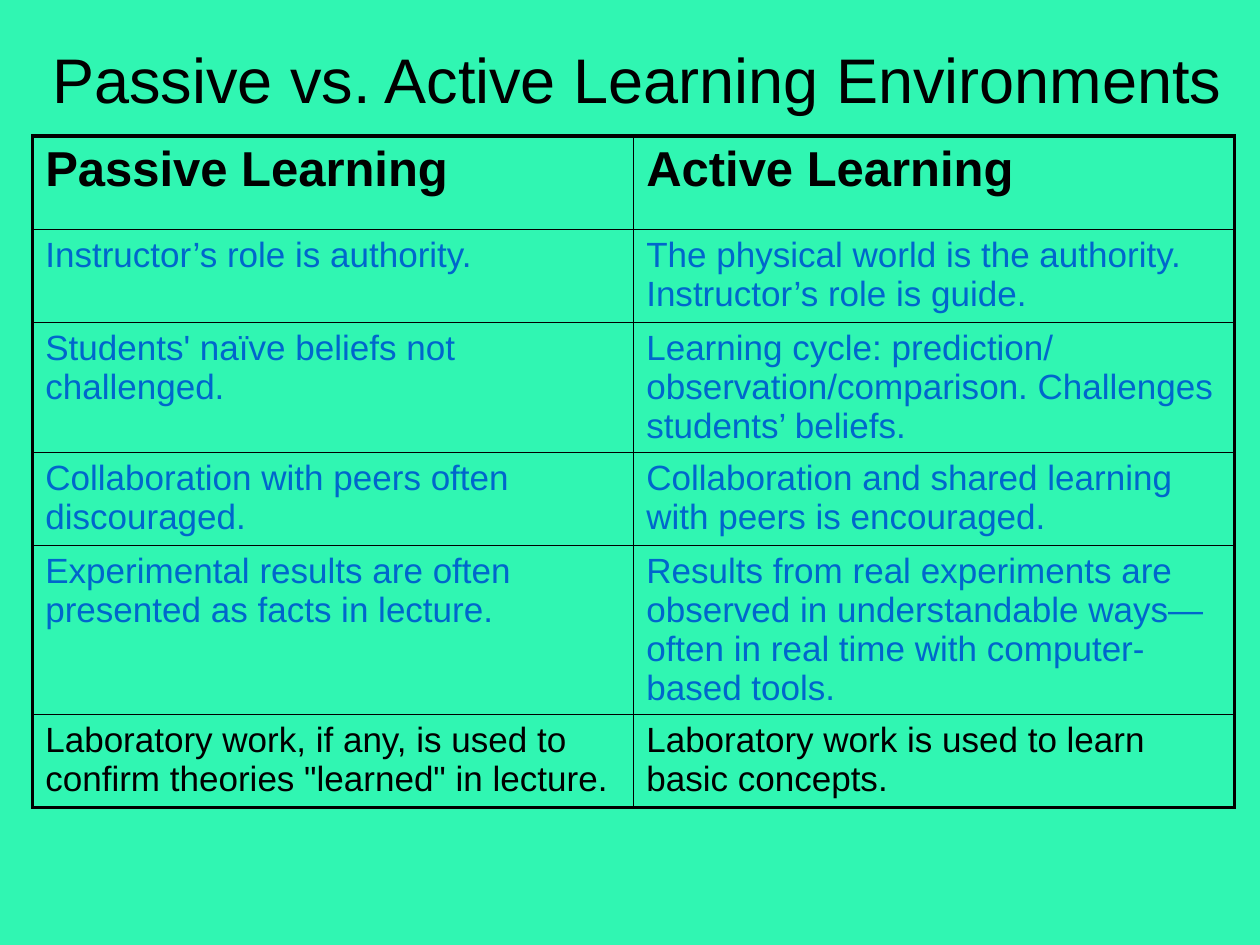
from dataclasses import dataclass

from lxml import etree
from pptx import Presentation
from pptx.dml.color import RGBColor
from pptx.enum import text
from pptx.oxml import ns
from pptx.util import Inches, Pt


@dataclass(frozen=True)
class Theme:
    font: str = "Arial"
    background: str = "30F6B2"
    ink: str = "000000"
    accent: str = "0066CC"
    title_size: int = 36
    header_size: int = 28
    body_size: int = 20
    outer_line: float = 2.25
    inner_line: float = 1


THEME = Theme()
TITLE = "Passive vs. Active Learning Environments"
COMPARISON = [
    ("Passive Learning", "Active Learning"),
    ("Instructor’s role is authority.",
     "The physical world is the authority. Instructor’s role is guide."),
    ("Students' naïve beliefs not challenged.",
     "Learning cycle: prediction/ observation/comparison. "
     "Challenges students’ beliefs."),
    ("Collaboration with peers often discouraged.",
     "Collaboration and shared learning with peers is encouraged."),
    ("Experimental results are often presented as facts in lecture.",
     "Results from real experiments are observed in understandable ways—"
     "often in real time with computer-based tools."),
    ('Laboratory work, if any, is used to confirm theories "learned" in lecture.',
     "Laboratory work is used to learn basic concepts."),
]


def add_span(para, words, size, color, bold=False):
    span = para.add_run()
    span.text = words
    span.font.name = THEME.font
    span.font.size = Pt(size)
    span.font.bold = bold
    span.font.color.rgb = RGBColor.from_string(color)


def add_border(cell, side, width):
    properties = cell._tc.get_or_add_tcPr()
    line = etree.SubElement(properties, ns.qn(f"a:ln{side}"), w=str(Pt(width)))
    fill = etree.SubElement(line, ns.qn("a:solidFill"))
    etree.SubElement(fill, ns.qn("a:srgbClr"), val=THEME.ink)


def add_title(page):
    box = page.shapes.title
    box.left, box.top = Inches(0.29), Inches(0)
    box.width, box.height = Inches(9.53), Inches(1.25)
    frame = box.text_frame
    frame.auto_size = text.MSO_AUTO_SIZE.NONE
    frame.vertical_anchor = text.MSO_ANCHOR.MIDDLE
    para = frame.paragraphs[0]
    para.alignment = text.PP_ALIGN.CENTER
    add_span(para, TITLE, THEME.title_size, THEME.ink)


def add_comparison(page):
    last_row, last_column = len(COMPARISON) - 1, len(COMPARISON[0]) - 1
    table = page.shapes.add_table(
        last_row + 1, last_column + 1,
        Inches(0.26), Inches(1.08), Inches(9.54), Inches(4.44)).table
    table.first_row = table.horz_banding = False

    for row, entries in enumerate(COMPARISON):
        header = row == 0
        size = THEME.header_size if header else THEME.body_size
        color = THEME.ink if row in (0, last_row) else THEME.accent
        for column, words in enumerate(entries):
            cell = table.cell(row, column)
            add_span(cell.text_frame.paragraphs[0], words, size, color, header)
            # Heavy lines on the outer edges, thin lines inside
            outer = {"L": column == 0, "R": column == last_column,
                     "T": header, "B": row == last_row}
            for side, is_outer in outer.items():
                add_border(cell, side,
                           THEME.outer_line if is_outer else THEME.inner_line)
            cell.fill.background()


def main():
    deck = Presentation()
    deck.slide_width, deck.slide_height = Inches(10), Inches(7.5)

    # Title-only page on a plain background
    page = deck.slides.add_slide(deck.slide_layouts[5])
    page.background.fill.solid()
    page.background.fill.fore_color.rgb = RGBColor.from_string(THEME.background)

    add_title(page)
    add_comparison(page)
    deck.save("out.pptx")


if __name__ == "__main__":
    main()
